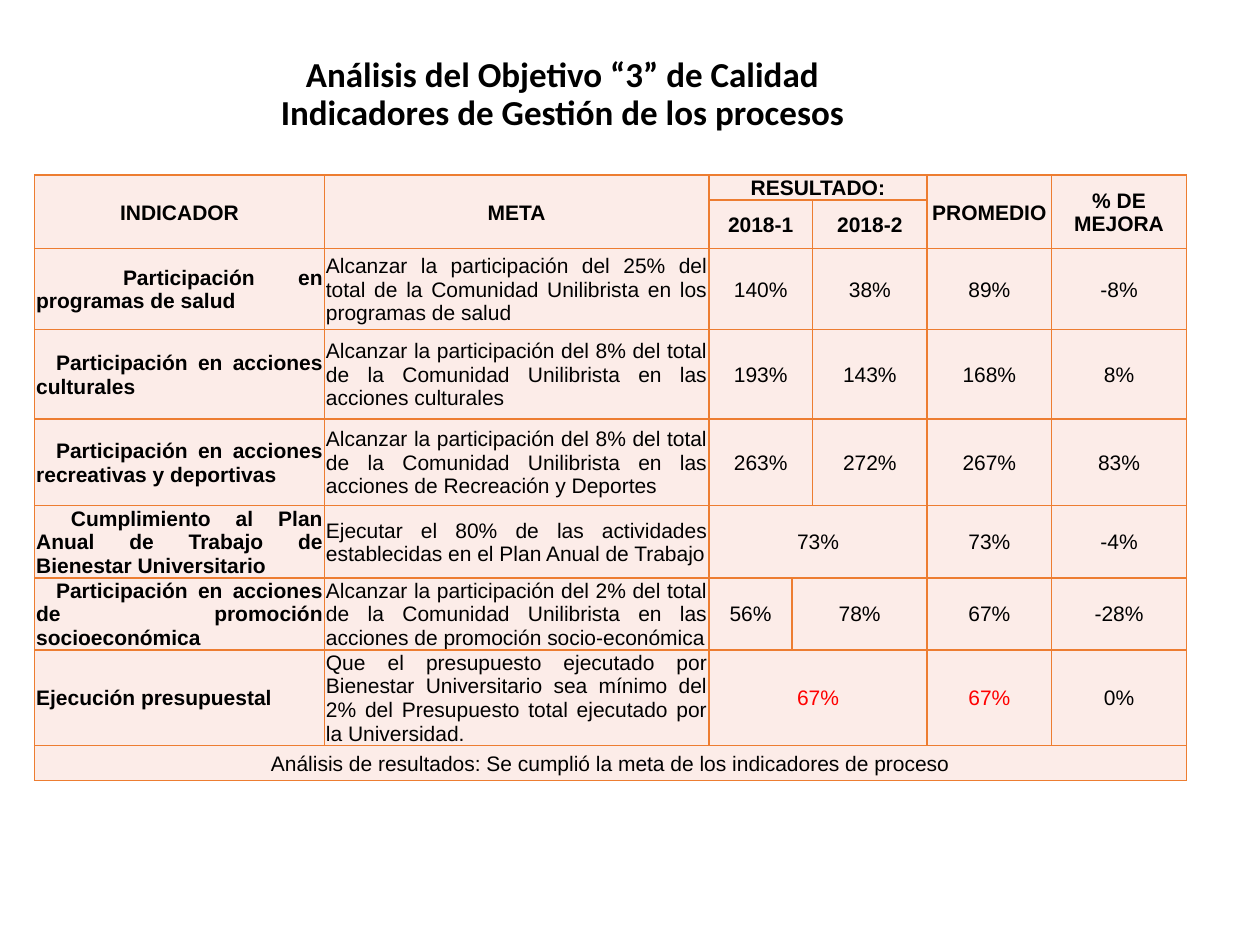
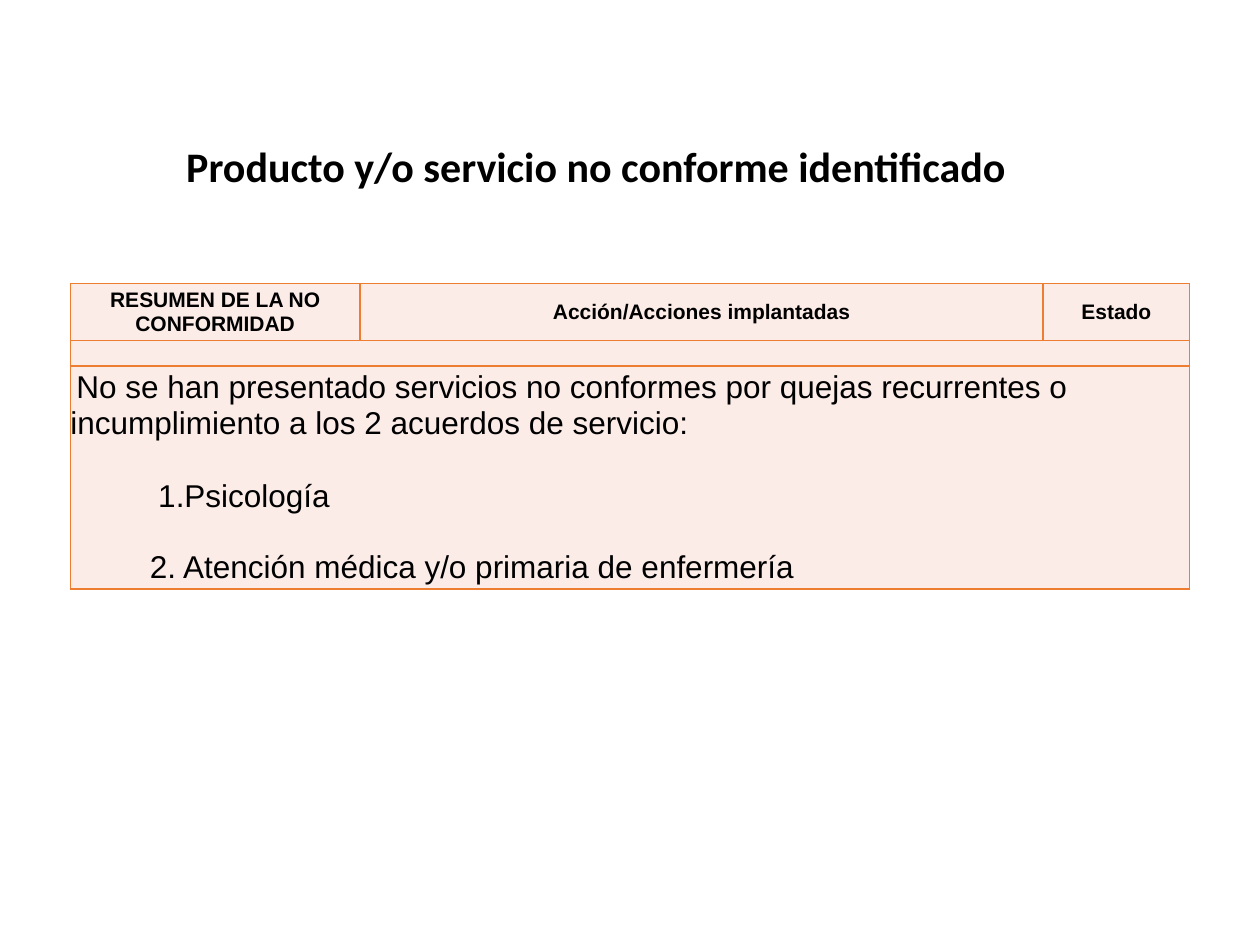
import lxml.etree
import pptx
import pptx.dml.color
import pptx.enum.text
import pptx.oxml.ns
import pptx.util

Cm = pptx.util.Cm
Pt = pptx.util.Pt
Align = pptx.enum.text.PP_ALIGN
Anchor = pptx.enum.text.MSO_ANCHOR
qn = pptx.oxml.ns.qn

BLACK = "000000"
RED = "FF0000"
ORANGE = "ED7D31"
PINK = "FCECE8"
TABLE_FONT = "Arial"
TITLE_FONT = "Calibri"
TITLE_ONLY_LAYOUT = 5

INDICATOR_COLUMNS = [5.84, 7.75, 1.68, 0.41, 2.31, 2.51, 2.72]
INDICATOR_ROWS = [0.48, 0.96, 1.63, 1.8, 1.75, 1.45, 1.45, 1.91, 0.71]
# Row, column, rows spanned, columns spanned, text
INDICATOR_HEADERS = [
    (0, 0, 2, 1, "INDICADOR"),
    (0, 1, 2, 1, "META"),
    (0, 2, 1, 3, "RESULTADO:"),
    (0, 5, 2, 1, "PROMEDIO"),
    (0, 6, 2, 1, "% DE MEJORA"),
    (1, 2, 1, 2, "2018-1"),
    (1, 4, 1, 1, "2018-2"),
]
# Name, first-line indent, goal, results as (columns spanned, text), average, improvement, colour
INDICATORS = [
    ("Participación en programas de salud", 1.75,
     "Alcanzar la participación del 25% del total de la Comunidad Unilibrista en los programas de salud",
     [(2, "140%"), (1, "38%")], "89%", "-8%", BLACK),
    ("Participación en acciones culturales", 0.4,
     "Alcanzar la participación del 8% del total de la Comunidad Unilibrista en las acciones culturales",
     [(2, "193%"), (1, "143%")], "168%", "8%", BLACK),
    ("Participación en acciones recreativas y deportivas", 0.4,
     "Alcanzar la participación del 8% del total de la Comunidad Unilibrista en las acciones de Recreación y Deportes",
     [(2, "263%"), (1, "272%")], "267%", "83%", BLACK),
    ("Cumplimiento al Plan Anual de Trabajo de Bienestar Universitario", 0.7,
     "Ejecutar el 80% de las actividades establecidas en el Plan Anual de Trabajo",
     [(3, "73%")], "73%", "-4%", BLACK),
    ("Participación en acciones de promoción socioeconómica", 0.4,
     "Alcanzar la participación del 2% del total de la Comunidad Unilibrista en las acciones de promoción socio-económica",
     [(1, "56%"), (2, "78%")], "67%", "-28%", BLACK),
    ("Ejecución presupuestal", 0,
     "Que el presupuesto ejecutado por Bienestar Universitario sea mínimo del 2% del Presupuesto total ejecutado por la Universidad.",
     [(3, "67%")], "67%", "0%", RED),
]
CONCLUSION = "Análisis de resultados: Se cumplió la meta de los indicadores de proceso"

SERVICE_COLUMNS = [5.84, 13.77, 2.95]
SERVICE_ROWS = [1.14, 0.48, 4.5]
SERVICE_HEADERS = ["RESUMEN DE LA NO CONFORMIDAD", "Acción/Acciones implantadas", "Estado"]
# Text, first-line indent, space before
SERVICE_LINES = [
    ("No se han presentado servicios no conformes por quejas recurrentes o "
     "incumplimiento a los 2 acuerdos de servicio:", 0.12, 0),
    ("1.Psicología", 1.77, 22),
    ("2. Atención médica y/o primaria de enfermería", 1.6, 20),
]


def rgb(hex_colour):
    return pptx.dml.color.RGBColor.from_string(hex_colour)


def write_text(paragraph, text, *, size=12, bold=False, colour=BLACK, font=TABLE_FONT,
               align=Align.CENTER, indent=0, before=0, spacing=1.0):
    """Fill a paragraph; a newline in the text becomes a line break."""
    paragraph.alignment = align
    paragraph.line_spacing = spacing
    paragraph.space_before = Pt(before)
    if indent:
        paragraph._p.get_or_add_pPr().set("indent", str(Cm(indent)))
    for number, line in enumerate(text.split("\n")):
        if number:
            paragraph.add_line_break()
        run = paragraph.add_run()
        run.text = line
        run.font.size = Pt(size)
        run.font.bold = bold
        run.font.name = font
        run.font.color.rgb = rgb(colour)


def write_title(slide, box, text, **text_format):
    title = slide.shapes.title
    title.left, title.top, title.width, title.height = map(Cm, box)
    frame = title.text_frame
    frame.word_wrap = True
    frame.auto_size = pptx.enum.text.MSO_AUTO_SIZE.NONE
    frame.vertical_anchor = Anchor.MIDDLE
    write_text(frame.paragraphs[0], text, bold=True, font=TITLE_FONT, spacing=0.9, **text_format)


def style_cell(cell, margin):
    cell.margin_left = cell.margin_right = cell.margin_top = Cm(margin)
    cell.margin_bottom = 0
    cell.vertical_anchor = Anchor.MIDDLE
    properties = cell._tc.get_or_add_tcPr()
    for side in ("lnL", "lnR", "lnT", "lnB"):
        line = lxml.etree.SubElement(properties, qn(f"a:{side}"), w=str(Pt(1)))
        fill = lxml.etree.SubElement(line, qn("a:solidFill"))
        lxml.etree.SubElement(fill, qn("a:srgbClr"), val=ORANGE)
    cell.fill.solid()
    cell.fill.fore_color.rgb = rgb(PINK)


def add_bordered_table(slide, left, top, columns, rows, margin):
    frame = slide.shapes.add_table(len(rows), len(columns), Cm(left), Cm(top),
                                   Cm(sum(columns)), Cm(sum(rows)))
    table = frame.table
    table.first_row = table.horz_banding = False
    for column, width in zip(table.columns, columns):
        column.width = Cm(width)
    for row, height in zip(table.rows, rows):
        row.height = Cm(height)
    for cell in table.iter_cells():
        style_cell(cell, margin)
    return table


def span_cell(table, row, column, row_span=1, column_span=1):
    cell = table.cell(row, column)
    if row_span * column_span > 1:
        cell.merge(table.cell(row + row_span - 1, column + column_span - 1))
    return cell


def write_cell(table, row, column, text, row_span=1, column_span=1, **text_format):
    cell = span_cell(table, row, column, row_span, column_span)
    write_text(cell.text_frame.paragraphs[0], text, **text_format)
    return cell


def add_indicator_table(slide, left, top):
    table = add_bordered_table(slide, left, top, INDICATOR_COLUMNS, INDICATOR_ROWS, 0.03)
    for row, column, row_span, column_span, text in INDICATOR_HEADERS:
        write_cell(table, row, column, text, row_span, column_span, bold=True)
    table.cell(0, 2).vertical_anchor = Anchor.BOTTOM

    for row, indicator in enumerate(INDICATORS, start=2):
        name, indent, goal, results, average, improvement, colour = indicator
        write_cell(table, row, 0, name, bold=True, align=Align.JUSTIFY, indent=indent)
        write_cell(table, row, 1, goal, align=Align.JUSTIFY)
        column = 2
        for column_span, result in results:
            write_cell(table, row, column, result, column_span=column_span, colour=colour)
            column += column_span
        write_cell(table, row, 5, average, colour=colour)
        write_cell(table, row, 6, improvement)

    write_cell(table, len(INDICATOR_ROWS) - 1, 0, CONCLUSION,
               column_span=len(INDICATOR_COLUMNS))


def add_service_table(slide, left, top):
    table = add_bordered_table(slide, left, top, SERVICE_COLUMNS, SERVICE_ROWS, 0)
    for column, header in enumerate(SERVICE_HEADERS):
        write_cell(table, 0, column, header, bold=True)

    # The empty band keeps its low height only with a small end-of-paragraph size
    for column in range(len(SERVICE_COLUMNS)):
        paragraph = table.cell(1, column).text_frame.paragraphs[0]
        lxml.etree.SubElement(paragraph._p, qn("a:endParaRPr"), sz="1200")
    span_cell(table, 1, 0, column_span=len(SERVICE_COLUMNS))

    frame = span_cell(table, 2, 0, column_span=len(SERVICE_COLUMNS)).text_frame
    for number, (text, indent, before) in enumerate(SERVICE_LINES):
        paragraph = frame.add_paragraph() if number else frame.paragraphs[0]
        write_text(paragraph, text, size=18, align=Align.LEFT, indent=indent, before=before)


def add_slide(presentation):
    return presentation.slides.add_slide(presentation.slide_layouts[TITLE_ONLY_LAYOUT])


def build_indicator_slide(presentation):
    slide = add_slide(presentation)
    write_title(slide, (0, 0.91, 22.68, 2.01),
                "Análisis del Objetivo “3” de Calidad\nIndicadores de Gestión de los procesos",
                size=20)
    add_indicator_table(slide, 0.7, 3.53)


def build_service_slide(presentation):
    slide = add_slide(presentation)
    write_title(slide, (3.5, 2.51, 17.5, 1.8),
                "Producto y/o servicio no conforme identificado",
                size=24, align=Align.LEFT)
    add_service_table(slide, 1.42, 5.72)


def main():
    presentation = pptx.Presentation()
    presentation.slide_width = Cm(25.4)
    presentation.slide_height = Cm(19.05)
    build_indicator_slide(presentation)
    build_service_slide(presentation)
    presentation.save("out.pptx")


if __name__ == "__main__":
    main()
